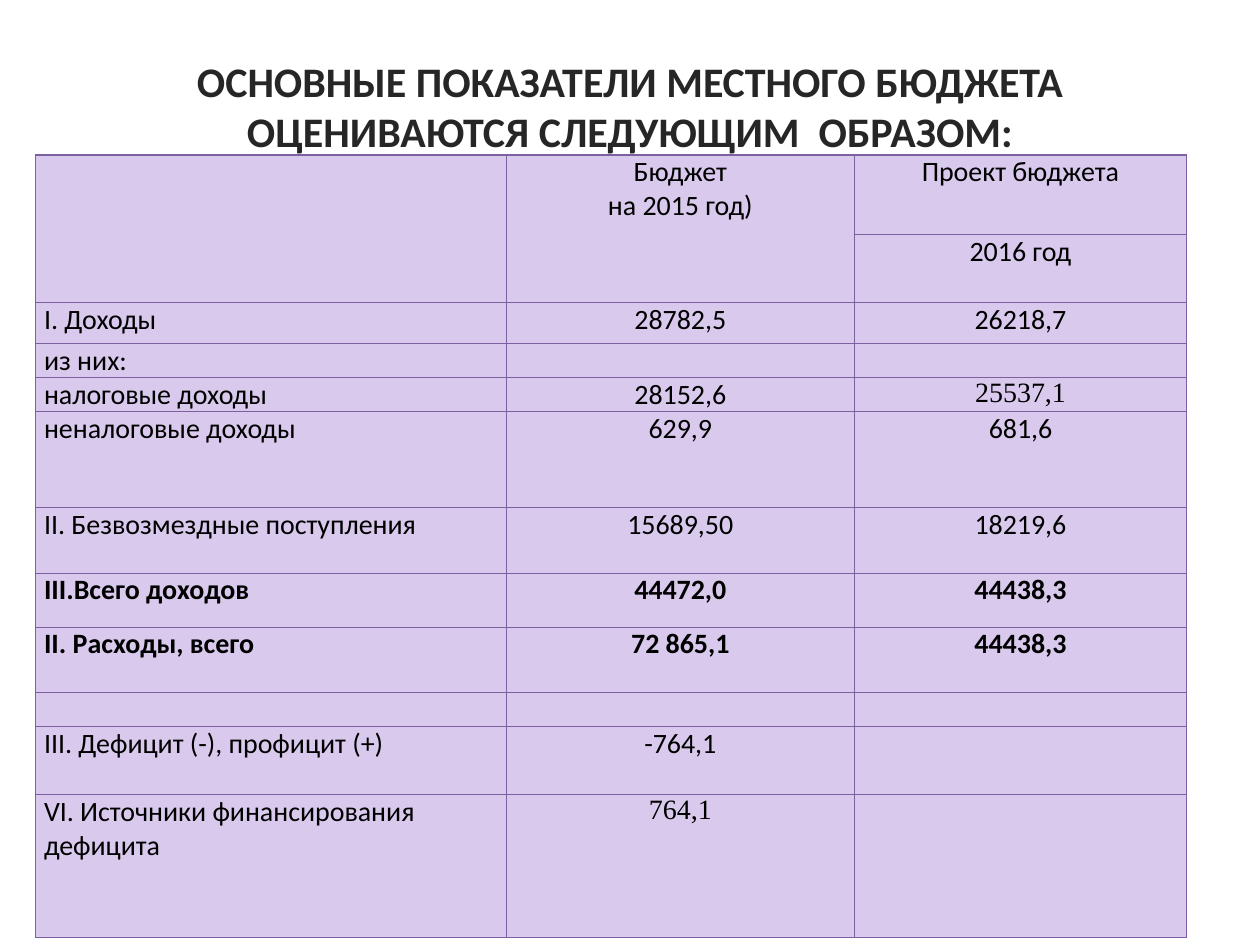
import pptx
import pptx.dml.color
import pptx.enum.text
import pptx.oxml
import pptx.oxml.ns
import pptx.util
from pptx.util import Inches

COLORS = {"title": "262626", "text": "000000", "cell": "D9CAED", "border": "7D60A0"}
FONT, SERIF = "Calibri", "Times New Roman"
ALIGN = pptx.enum.text.PP_ALIGN

COLUMN_WIDTHS = [3.74, 2.76, 2.64]
# Row height, then the text of each column
ROWS = [
    (0.63, "", "Бюджет\nна 2015 год)", "Проект бюджета"),
    (0.54, "", "", "2016 год"),
    (0.33, "I. Доходы", "28782,5", "26218,7"),
    (0.27, "из них:", "", ""),
    (0.27, "налоговые доходы", "28152,6", "25537,1"),
    (0.76, "неналоговые доходы", "629,9", "681,6"),
    (0.52, "II. Безвозмездные поступления", "15689,50", "18219,6"),
    (0.43, "III.Всего доходов", "44472,0", "44438,3"),
    (0.52, "II. Расходы, всего", "72 865,1", "44438,3"),
    (0.27, "", "", ""),
    (0.54, "III. Дефицит (-), профицит (+)", "-764,1", ""),
    (1.13, "VI. Источники финансирования дефицита", "764,1", ""),
]
BOLD_ROWS = {7, 8}
SERIF_CELLS = {(4, 2), (11, 1)}


def rgb(name):
    return pptx.dml.color.RGBColor.from_string(COLORS[name])


def set_font(p, size, color, bold=False, name=FONT):
    p.font.size = pptx.util.Pt(size)
    p.font.name = name
    p.font.bold = bold
    p.font.color.rgb = rgb(color)


def add_title(slide, left, top, width, height):
    tf = slide.shapes.add_textbox(left, top, width, height).text_frame
    tf.word_wrap = True
    tf.vertical_anchor = pptx.enum.text.MSO_ANCHOR.MIDDLE
    p = tf.paragraphs[0]
    p.text = "ОСНОВНЫЕ ПОКАЗАТЕЛИ МЕСТНОГО БЮДЖЕТА ОЦЕНИВАЮТСЯ СЛЕДУЮЩИМ  ОБРАЗОМ:"
    p.alignment = ALIGN.CENTER
    set_font(p, 24, "title", bold=True)


def set_borders(cell):
    tc_pr = cell._tc.get_or_add_tcPr()
    for i, side in enumerate(("lnL", "lnR", "lnT", "lnB")):
        tc_pr.insert(i, pptx.oxml.parse_xml(
            f'<a:{side} {pptx.oxml.ns.nsdecls("a")} w="{pptx.util.Pt(0.75)}">'
            f'<a:solidFill><a:srgbClr val="{COLORS["border"]}"/></a:solidFill>'
            f'</a:{side}>'))


def fill_cell(cell, text, row, col):
    cell.fill.solid()
    cell.fill.fore_color.rgb = rgb("cell")
    set_borders(cell)
    cell.margin_left = cell.margin_right = Inches(0.07)
    cell.margin_top = cell.margin_bottom = 0
    cell.text = text
    for p in cell.text_frame.paragraphs:
        p.alignment = ALIGN.CENTER if col else ALIGN.LEFT
        set_font(p, 16, "text", row in BOLD_ROWS,
                 SERIF if (row, col) in SERIF_CELLS else FONT)
        if not text:  # keeps empty rows from growing to the default size
            p._p.get_or_add_endParaRPr().set("sz", "1600")


def add_budget_table(slide, left, top, width, height):
    table = slide.shapes.add_table(
        len(ROWS), len(COLUMN_WIDTHS), left, top, width, height).table
    table.first_row = table.horz_banding = False
    for column, column_width in zip(table.columns, COLUMN_WIDTHS):
        column.width = Inches(column_width)
    for row, (row_height, *texts) in enumerate(ROWS):
        table.rows[row].height = Inches(row_height)
        for col, text in enumerate(texts):
            fill_cell(table.cell(row, col), text, row, col)
    for col in (0, 1):
        table.cell(0, col).merge(table.cell(1, col))


def main():
    prs = pptx.Presentation()
    prs.slide_width, prs.slide_height = Inches(10), Inches(7.5)
    slide = prs.slides.add_slide(prs.slide_layouts[6])
    add_title(slide, Inches(0.5), Inches(0.13), Inches(9), Inches(1.42))
    add_budget_table(slide, Inches(0.28), Inches(1.23), Inches(sum(COLUMN_WIDTHS)),
                     Inches(sum(row[0] for row in ROWS)))
    prs.save("out.pptx")


if __name__ == "__main__":
    main()
